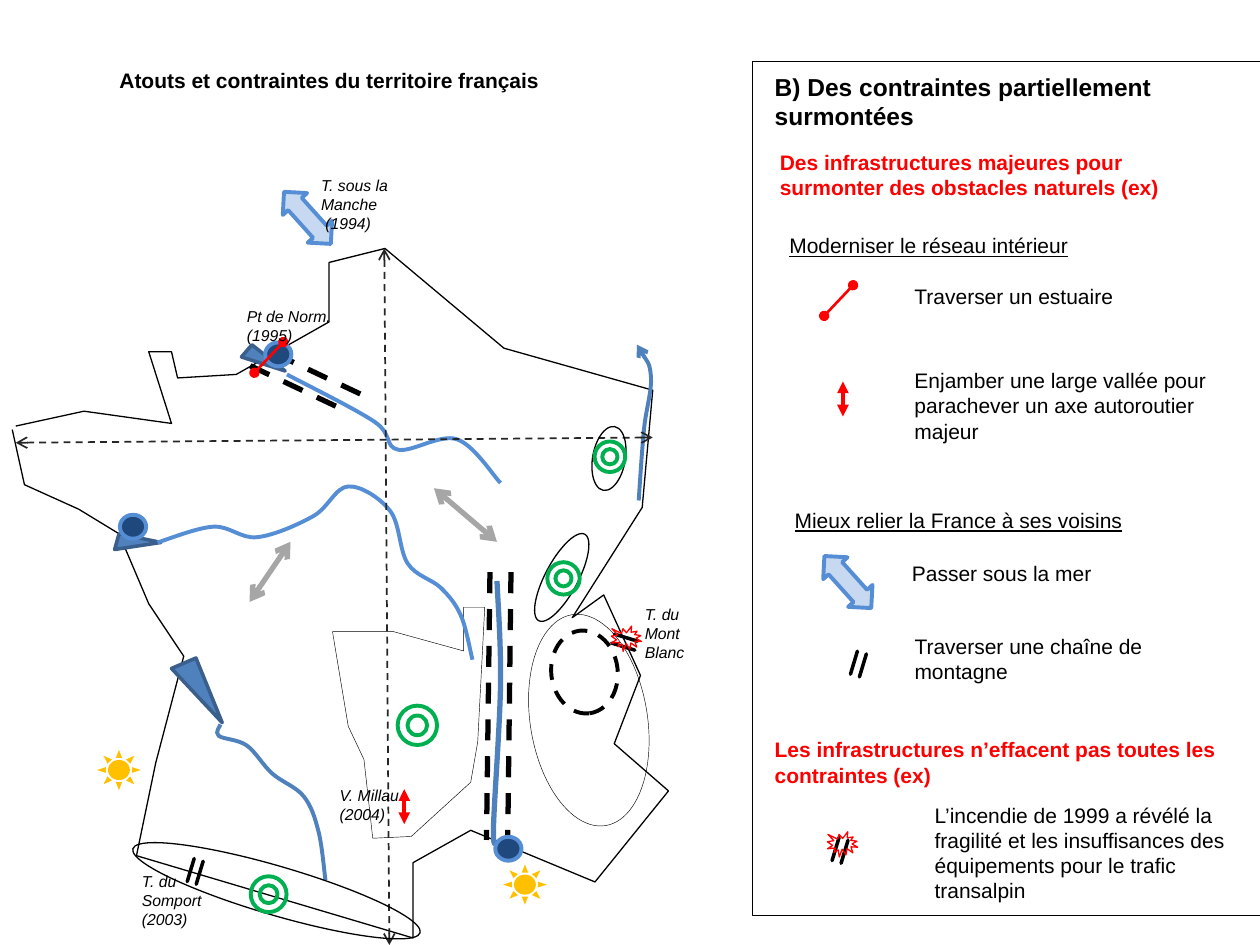
from dataclasses import dataclass
from math import ceil
from typing import Optional

from lxml import etree
from pptx import Presentation
from pptx.dml.color import RGBColor
from pptx.enum.dml import MSO_LINE
from pptx.enum.shapes import MSO_CONNECTOR, MSO_SHAPE
from pptx.enum.text import MSO_AUTO_SIZE, PP_ALIGN
from pptx.oxml.ns import qn
from pptx.util import Pt

DASH = MSO_LINE.DASH
STRAIGHT = MSO_CONNECTOR.STRAIGHT
RECT, OVAL, RING, SUN = MSO_SHAPE.RECTANGLE, MSO_SHAPE.OVAL, MSO_SHAPE.DONUT, MSO_SHAPE.SUN
BARS, DOUBLE_ARROW = MSO_SHAPE.MATH_EQUAL, MSO_SHAPE.UP_DOWN_ARROW
BURST = MSO_SHAPE.EXPLOSION1
BLACK, RED, BLUE, SKY = "000000", "FF0000", "4F81BD", "558ED5"
SLIDE_W, SLIDE_H = 720, 540
LEGEND_X = 515.5


@dataclass(frozen=True)
class Style:
    line: Optional[str] = None
    width: float = 2.25
    fill: Optional[str] = None
    dash: bool = False
    head: Optional[str] = None
    tail: Optional[str] = None
    adj: tuple = ()


@dataclass(frozen=True)
class Symbol:
    kind: int
    center: tuple
    size: tuple
    style: Style
    rot: float = 0


@dataclass(frozen=True)
class Label:
    text: str
    x: float
    y: float
    width: Optional[float] = None
    size: float = 12
    color: str = BLACK
    bold: bool = False
    italic: bool = False
    underline: bool = False
    center: bool = False
    wrap: bool = True


def caption(text: str, x: float, y: float, width: float, wrap: bool = True) -> Label:
    return Label(text, x, y, width, size=9, italic=True, wrap=wrap)


THIN, HAIR = Style(BLACK, 0.75), Style(BLACK, 0.25)
VALLEY = Style(BLACK, 3, dash=True)
LINK = Style("A6A6A6", 3, head="arrow", tail="arrow")
EXTENT = Style("262626", 1, dash=True, head="arrow", tail="arrow")
BRIDGE = Style(RED, 1.5, head="oval", tail="oval")
VIADUCT = Style(RED, head="triangle", tail="triangle")
ESTUARY = Style("3A5F8C", 2, BLUE)
TUNNEL = Style(BLACK, 2, BLACK, adj=(0, 0.179))
SEA_LINK = Style(SKY, fill="C6D9F1", adj=(0.428, 0.558))
PORT = Style(SKY, fill="1F497D")

COAST = [(7, 245.5), (14, 277), (45, 291), (68, 305), (85, 345), (105, 375), (89, 436),
         (78, 489), (236, 536), (236, 493), (269, 474.5), (340, 504), (382, 452), (351, 425),
         (366, 386), (345, 340), (327, 353), (367, 290), (373, 223), (288, 199), (220, 142),
         (188, 150), (188, 184), (135, 214), (101.5, 216), (98, 201), (85, 201), (98, 242),
         (48, 235), (9, 243.5)]
MASSIF = [(190, 361), (199, 415), (208, 434), (213, 479), (235, 478), (269, 447), (273, 424),
          (277, 347), (265, 347), (265, 372), (225, 361), (190, 361)]
ESTUARIES = [
    [(138, 204), (163, 212), (144, 197), (138, 204)],
    [(65.5, 314), (92, 310), (68, 305), (65.5, 314)],
    [(98, 382), (127, 413), (112, 376), (98, 382)],
]
RIVERS = [
    (Style(SKY), [(164, 214), (214, 241), (227.5, 257), (261, 251), (286, 276)]),
    (Style(SKY), [(90, 310), (122, 301), (147, 307), (179, 295), (199, 278), (223, 292),
                  (233, 322), (252, 336), (263.5, 352), (270, 377)]),
    (Style(BLUE), [(186, 503), (182, 475), (173.5, 455), (155.5, 442), (141, 426),
                   (125, 420.5), (126, 414)]),
    (Style(BLUE, 3), [(284, 332), (286, 391), (282, 473), (284, 481)]),
    (Style(BLUE, tail="arrow"), [(365, 286), (368, 245.5), (372, 215), (364, 197)]),
]

ROUTES = [
    *[(VALLEY, (280 + d, 327), (278 + d, 480 + d)) for d in (0, 12)],
    *[(VALLEY, (157 - d, 202 + d / 2), (212 - d, 228 + d / 2)) for d in (0, 14)],
    (LINK, (142.6, 344), (166, 309.6)), (LINK, (284, 309.6), (248, 279)),
    (EXTENT, (219.6, 142), (222.5, SLIDE_H)), (EXTENT, (9, 253), (373, 250)),
]
CROSSINGS = [
    *[(BRIDGE, (x, y), (x + 16.5, y - 17.5)) for x, y in ((145.4, 213), (471, 180.5))],
    *[(VIADUCT, (x, y), (x, y + 20)) for x, y in ((481.7, 218), (231, 451))],
]


def repeat(kind: int, centers: list, size: tuple, style: Style, rot: float = 0) -> list:
    return [Symbol(kind, center, size, style, rot) for center in centers]


SYMBOLS = [
    Symbol(RECT, (575, 279), (290, 488), HAIR),
    Symbol(OVAL, (348, 262), (18.7, 37), THIN, 10),
    Symbol(OVAL, (321, 330), (18.7, 56), THIN, 28),
    Symbol(OVAL, (158, 509), (171, 28), THIN, 16.3),
    Symbol(OVAL, (336.5, 411.5), (122, 67), HAIR, 261),
    Symbol(OVAL, (334, 384), (47.5, 38), Style(BLACK, dash=True), 263.5),
    Symbol(BARS, (357, 367), (18.7, 30), TUNNEL, 17),
    *repeat(BARS, [(111.5, 498), (490.5, 379.5), (480, 486)], (18.7, 30), TUNNEL, 106.7),
    *repeat(SUN, [(300, 505.5), (68, 440)], (25, 23), Style(fill="FFC000")),
    *[Symbol(RING, center, (d, d), Style("00B050")) for center, d in (
        ((238.5, 414.5), 22.5), ((322, 330.5), 18.5), ((348.5, 261), 17.5), ((153.5, 511), 20.5))],
    *repeat(OVAL, [(159, 202.5), (76, 301), (290.5, 485)], (15, 13.7), PORT),
    *repeat(DOUBLE_ARROW, [(484.5, 332.6), (175.7, 124.5)], (18.7, 40), SEA_LINK, 318),
    *repeat(BURST, [(358, 365), (481.5, 482.5)], (17.3, 14.4), Style(RED, 0.75)),
]

LABELS = [
    Label("Atouts et contraintes du territoire français", 41, 35.3, 294.5, bold=True, center=True),
    Label("B) Des contraintes partiellement surmontées", 435.6, 37.4, size=14, bold=True),
    Label("Des infrastructures majeures pour surmonter des obstacles naturels (ex)",
          438.5, 82, 245, color=RED, bold=True),
    Label("Moderniser le réseau intérieur", 444, 129.6, 222, underline=True),
    Label("Traverser un estuaire", LEGEND_X, 158.4),
    Label("Enjamber une large vallée pour parachever un axe autoroutier majeur", LEGEND_X, 206.6),
    Label("Mieux relier la France à ses voisins", 447, 286.6, 240, underline=True),
    Label("Passer sous la mer", 514, 316.8, 170),
    Label("Traverser une chaîne de montagne", LEGEND_X, 358.6, 165),
    Label("Les infrastructures n’effacent pas toutes les contraintes (ex)",
          435.6, 417.6, color=RED, bold=True),
    Label("L’incendie de 1999 a révélé la fragilité et les insuffisances des équipements "
          "pour le trafic transalpin", 527, 455),
    caption("T. du Mont Blanc", 361.4, 342, 44.6),
    caption("T. du Somport (2003)", 74, 494.6, 54.7),
    caption("V. Millau (2004)", 187, 445.7, 54.7),
    caption("Pt de Norm. (1995)", 134, 172, 64),
    caption("T. sous la\nManche\n (1994)", 176.4, 97, 56, wrap=False),
]


def rgb(value: str) -> RGBColor:
    return RGBColor.from_string(value)


def style_line(sp, style: Style) -> None:
    if style.line is None:
        sp.line.fill.background()
        return
    sp.line.color.rgb = rgb(style.line)
    sp.line.width = Pt(style.width)
    if style.dash:
        sp.line.dash_style = DASH
    ln = sp._element.spPr.find(qn("a:ln"))
    for tag, end in (("a:headEnd", style.head), ("a:tailEnd", style.tail)):
        if end:
            etree.SubElement(ln, qn(tag)).set("type", end)


def style_shape(sp, style: Style) -> None:
    sp.shadow.inherit = False
    if style.fill:
        sp.fill.solid()
        sp.fill.fore_color.rgb = rgb(style.fill)
    else:
        sp.fill.background()
    style_line(sp, style)


def draw_path(s, style: Style, points: list):
    corners = [(Pt(x), Pt(y)) for x, y in points]
    fb = s.shapes.build_freeform(*corners[0], scale=1.0)
    fb.add_line_segments(corners[1:], close=points[0] == points[-1])
    sp = fb.convert_to_shape()
    style_shape(sp, style)
    return sp


def draw_river(s, style: Style, points: list) -> None:
    ends = [points[0], *points, points[-1]]
    course = [points[0]]
    for a, b, c, d in zip(ends, ends[1:], ends[2:], ends[3:]):
        course += [tuple(q + (r - p) / 6 for p, q, r in zip(a, b, c)),
                   tuple(q - (r - p) / 6 for p, q, r in zip(b, c, d)), c]
    sp = draw_path(s, style, course)
    outline = next(sp._element.iter(qn("a:path")))
    segments = outline.findall(qn("a:lnTo"))
    for curve, *extras in zip(segments[::3], segments[1::3], segments[2::3]):
        curve.tag = qn("a:cubicBezTo")
        for extra in extras:
            curve.append(extra[0])
            outline.remove(extra)


def draw_route(s, style: Style, start: tuple, end: tuple) -> None:
    sp = s.shapes.add_connector(STRAIGHT, *[Pt(v) for v in start + end])
    style_line(sp, style)
    etree.SubElement(sp._element.spPr, qn("a:effectLst"))


def draw_symbol(s, symbol: Symbol) -> None:
    (x, y), (w, h) = symbol.center, symbol.size
    sp = s.shapes.add_shape(symbol.kind, Pt(x - w / 2), Pt(y - h / 2), Pt(w), Pt(h))
    sp.rotation = symbol.rot
    for i, value in enumerate(symbol.style.adj):
        sp.adjustments[i] = value
    style_shape(sp, symbol.style)


def draw_label(s, label: Label) -> None:
    width = label.width or SLIDE_W - label.x
    lines = ceil(len(label.text) * label.size / 2 / (width - 14.4))
    height = 7.2 + lines * label.size * 1.2
    tf = s.shapes.add_textbox(Pt(label.x), Pt(label.y), Pt(width), Pt(height)).text_frame
    tf.word_wrap = label.wrap
    tf.auto_size = MSO_AUTO_SIZE.SHAPE_TO_FIT_TEXT
    tf.text = label.text
    for p in tf.paragraphs:
        if label.center:
            p.alignment = PP_ALIGN.CENTER
        for r in p.runs:
            r.font.name, r.font.size = "Arial", Pt(label.size)
            r.font.bold, r.font.italic = label.bold, label.italic
            r.font.underline = label.underline
            r.font.color.rgb = rgb(label.color)


def main() -> None:
    prs = Presentation()
    prs.slide_width, prs.slide_height = Pt(SLIDE_W), Pt(SLIDE_H)
    s = prs.slides.add_slide(prs.slide_layouts[6])
    for style, points in [(THIN, COAST), (HAIR, MASSIF), *[(ESTUARY, e) for e in ESTUARIES]]:
        draw_path(s, style, points)
    for style, points in RIVERS:
        draw_river(s, style, points)
    for route in ROUTES:
        draw_route(s, *route)
    for symbol in SYMBOLS:
        draw_symbol(s, symbol)
    for crossing in CROSSINGS:
        draw_route(s, *crossing)
    for label in LABELS:
        draw_label(s, label)
    prs.save("out.pptx")


if __name__ == "__main__":
    main()
